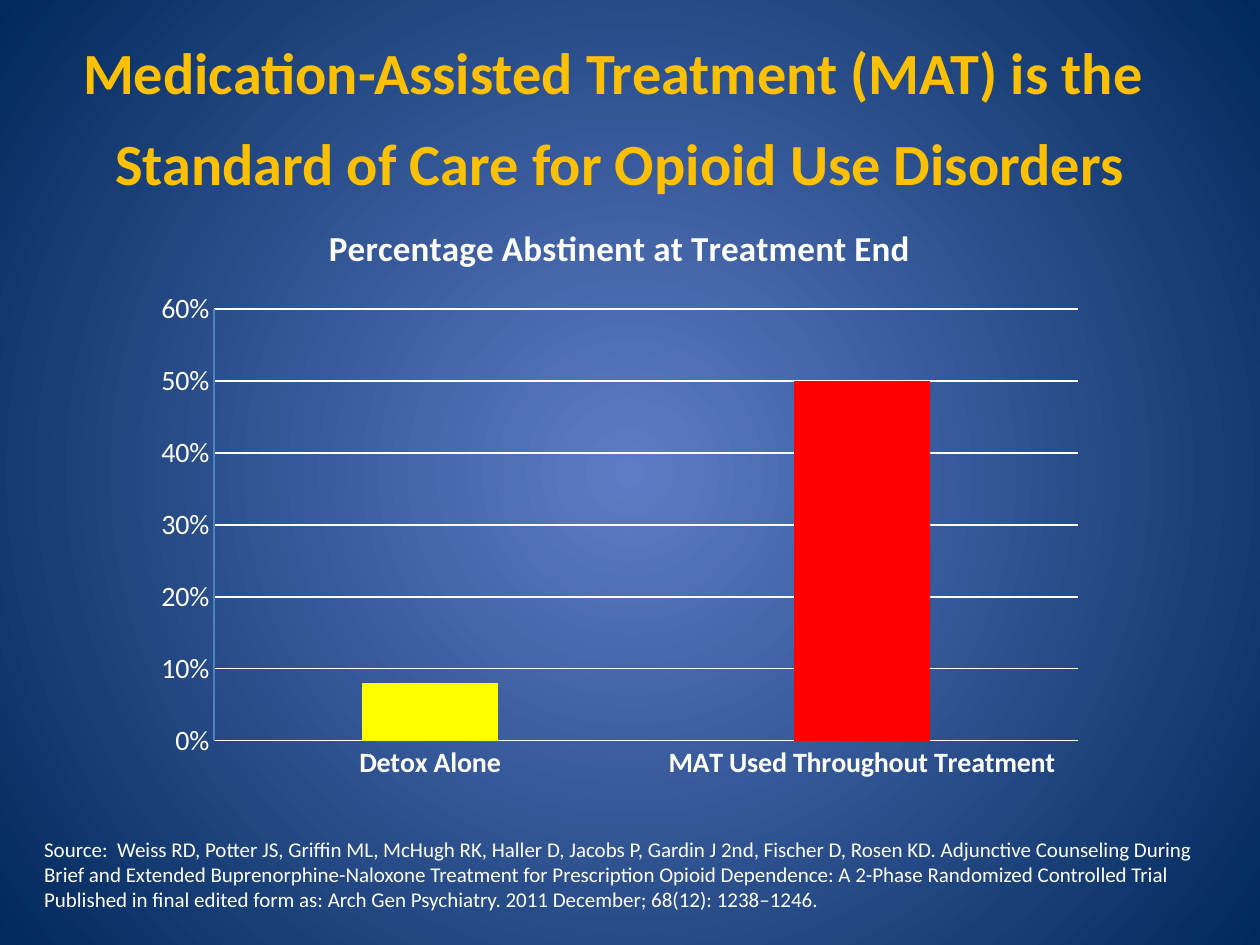
import pptx
import pptx.chart.data
import pptx.dml.color
import pptx.enum.chart
import pptx.enum.text
import pptx.oxml
import pptx.oxml.ns
import pptx.util
from pptx.util import Cm

COLORS = {
    "glow": "5E7CC5", "navy": "00295C", "gold": "FFC000", "white": "FFFFFF",
    "axis": "4F81BD", "detox": "FFFF00", "mat": "FF0000",
}
NS = pptx.oxml.ns.nsdecls("a", "c")


def rgb(name):
    return pptx.dml.color.RGBColor.from_string(COLORS[name])


def set_font(font, size, color, bold=False):
    values = {"name": "Calibri", "size": pptx.util.Pt(size), "bold": bold}
    for attribute, value in values.items():
        setattr(font, attribute, value)
    font.color.rgb = rgb(color)


deck = pptx.Presentation()
deck.slide_width, deck.slide_height = Cm(25.4), Cm(19.05)
slide = deck.slides.add_slide(deck.slide_layouts[5])

# Radial background
background = slide.background.fill
background.gradient()
for stop, color in zip(background.gradient_stops, ("glow", "navy")):
    stop.color.rgb = rgb(color)
gradient = slide.element.find(".//" + pptx.oxml.ns.qn("a:gradFill"))
linear = gradient.find(pptx.oxml.ns.qn("a:lin"))
gradient.replace(linear, pptx.oxml.parse_xml(
    f'<a:path {NS} path="circle">'
    '<a:fillToRect l="50000" t="50000" r="50000" b="50000"/></a:path>'))

# Headline
headline = slide.shapes.title
placement = {"left": Cm(-0.2), "top": Cm(0.6), "width": Cm(25.4), "height": Cm(3.38)}
for attribute, value in placement.items():
    setattr(headline, attribute, value)
headline.text_frame.text = ("Medication-Assisted Treatment (MAT) is the \n"
                            "Standard of Care for Opioid Use Disorders")
headline.text_frame.auto_size = pptx.enum.text.MSO_AUTO_SIZE.NONE
headline.text_frame.vertical_anchor = pptx.enum.text.MSO_ANCHOR.TOP
for line in headline.text_frame.paragraphs:
    line.alignment = pptx.enum.text.PP_ALIGN.CENTER
    line.space_before, line.space_after = pptx.util.Pt(0), pptx.util.Pt(12)
    set_font(line.runs[0].font, 33.3, "gold", True)

# Source citation
citation = slide.shapes.add_textbox(Cm(0.64), Cm(16.74), Cm(24.56), Cm(1.8)).text_frame
citation.word_wrap = True
citation.text = (
    "Source:  Weiss RD, Potter JS, Griffin ML, McHugh RK, Haller D, Jacobs P, "
    "Gardin J 2nd, Fischer D, Rosen KD. Adjunctive Counseling During Brief and "
    "Extended Buprenorphine-Naloxone Treatment for Prescription Opioid Dependence: "
    "A 2-Phase Randomized Controlled Trial Published in final edited form as: "
    "Arch Gen Psychiatry. 2011 December; 68(12): 1238–1246.")
set_font(citation.paragraphs[0].runs[0].font, 12, "white")

# Abstinence chart
measure = "Percentage Abstinent at Treatment End"
outcomes = pptx.chart.data.CategoryChartData(number_format="0%")
outcomes.categories = ["Detox Alone", "MAT Used Throughout Treatment"]
outcomes.add_series(measure, (0.08, 0.5))
abstinence = slide.shapes.add_chart(
    pptx.enum.chart.XL_CHART_TYPE.COLUMN_CLUSTERED,
    Cm(2.87), Cm(3.99), Cm(19.25), Cm(11.99), outcomes).chart
abstinence.has_legend = False
set_font(abstinence.font, 16, "white")
abstinence.has_title = True
abstinence.chart_title.include_in_layout = False
abstinence.chart_title.text_frame.text = measure
set_font(abstinence.chart_title.text_frame.paragraphs[0].runs[0].font, 20, "white", True)

# Bars
bars = abstinence.plots[0]
for attribute, value in {"gap_width": 219, "overlap": -27, "vary_by_categories": False}.items():
    setattr(bars, attribute, value)
for index, color in enumerate(("detox", "mat")):
    fill = bars.series[0].points[index].format.fill
    fill.solid()
    fill.fore_color.rgb = rgb(color)

# Axes
treatments, share = abstinence.category_axis, abstinence.value_axis
scale = {"minimum_scale": 0, "maximum_scale": 0.6, "major_unit": 0.1,
         "has_major_gridlines": True}
for attribute, value in scale.items():
    setattr(share, attribute, value)
share.tick_labels.number_format = "0%"
share.tick_labels.number_format_is_linked = False
for axis, bold in ((treatments, True), (share, False)):
    axis.major_tick_mark = axis.minor_tick_mark = pptx.enum.chart.XL_TICK_MARK.NONE
    set_font(axis.tick_labels.font, 16, "white", bold)
for rule, color in ((treatments.format.line, "white"), (share.format.line, "axis"),
                    (share.major_gridlines.format.line, "white")):
    rule.width = pptx.util.Pt(0.75)
    rule.color.rgb = rgb(color)

# Plot area placement, as fractions of the chart
plot_area = abstinence.element.find(".//" + pptx.oxml.ns.qn("c:plotArea"))
for layout in plot_area.findall(pptx.oxml.ns.qn("c:layout")):
    plot_area.remove(layout)
fractions = "".join(f'<c:{key} val="{value}"/>' for key, value in (
    ("layoutTarget", "inner"), ("xMode", "edge"), ("yMode", "edge"),
    ("x", 0.075), ("y", 0.187), ("w", 0.905), ("h", 0.726)))
plot_area.insert(0, pptx.oxml.parse_xml(
    f"<c:layout {NS}><c:manualLayout>{fractions}</c:manualLayout></c:layout>"))

deck.save("out.pptx")
